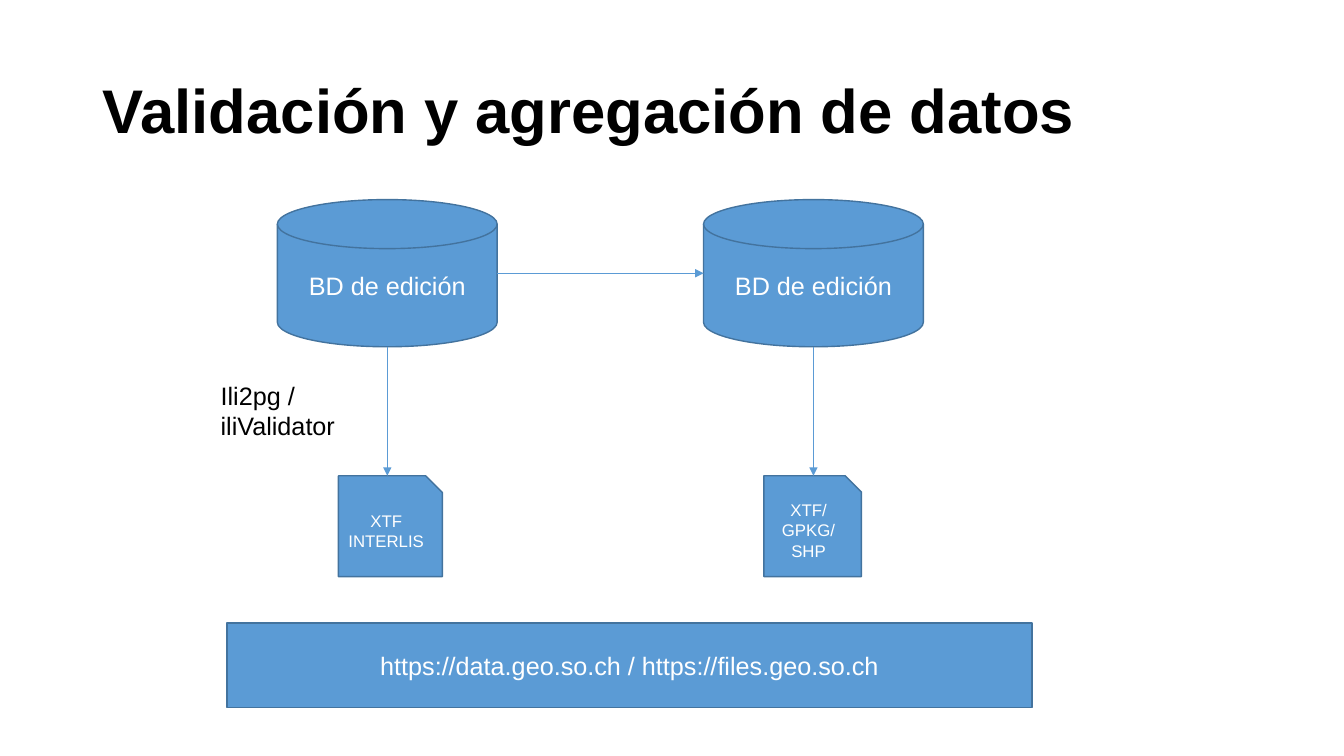
"""Build the slide on data validation and aggregation."""
from lxml import etree
from pptx import Presentation
from pptx.dml.color import RGBColor
from pptx.enum.shapes import MSO_CONNECTOR, MSO_SHAPE
from pptx.enum.text import MSO_ANCHOR, MSO_AUTO_SIZE, PP_ALIGN
from pptx.oxml.ns import qn
from pptx.util import Cm, Pt

TITLE = "Validación y agregación de datos"
TOOLS = "Ili2pg / iliValidator"
ADDRESSES = "https://data.geo.so.ch / https://files.geo.so.ch"
COLUMNS = [
    {"database": "BD de edición", "left": 6.99,
     "file": "XTF INTERLIS", "file_left": 8.53, "file_width": 2.62},
    {"database": "BD de edición", "left": 17.73,
     "file": "XTF/GPKG/SHP", "file_left": 19.25, "file_width": 2.46},
]

DATABASE_TOP, DATABASE_WIDTH, DATABASE_HEIGHT = 5.03, 5.54, 3.71
FILE_TOP, FILE_HEIGHT = 11.99, 2.54

FONT = "Arial"
BLACK = RGBColor(0x00, 0x00, 0x00)
WHITE = RGBColor(0xFF, 0xFF, 0xFF)
BLUE = RGBColor(0x5B, 0x9B, 0xD5)
DARK_BLUE = RGBColor(0x43, 0x73, 0x9E)

CYLINDER = MSO_SHAPE.FLOWCHART_MAGNETIC_DISK
FILE = MSO_SHAPE.SNIP_1_RECTANGLE
RECTANGLE = MSO_SHAPE.RECTANGLE
STRAIGHT = MSO_CONNECTOR.STRAIGHT
MIDDLE = MSO_ANCHOR.MIDDLE
LEFT, CENTER = PP_ALIGN.LEFT, PP_ALIGN.CENTER
NO_FIT, GROW = MSO_AUTO_SIZE.NONE, MSO_AUTO_SIZE.SHAPE_TO_FIT_TEXT


def write(box, text, size, color, align, bold=False):
    """Put one formatted paragraph in a box."""
    frame = box.text_frame
    frame.text = text
    frame.word_wrap = True
    para = frame.paragraphs[0]
    para.alignment = align
    font = para.runs[0].font
    font.name, font.size, font.bold = FONT, Pt(size), bold
    font.color.rgb = color


def add_block(page, kind, place, text, size):
    """Add a blue shape with centred white text."""
    block = page.shapes.add_shape(kind, *map(Cm, place))
    block.shadow.inherit = False
    block.fill.solid()
    block.fill.fore_color.rgb = BLUE
    block.line.color.rgb = DARK_BLUE
    block.line.width = Pt(1)
    write(block, text, size, WHITE, CENTER)
    block.text_frame.vertical_anchor = MIDDLE


def add_arrow(page, *ends):
    """Add a thin arrow from one point to another."""
    arrow = page.shapes.add_connector(STRAIGHT, *map(Cm, ends))
    arrow.line.color.rgb = BLUE
    arrow.line.width = Pt(0.5)
    etree.SubElement(arrow.line._get_or_add_ln(), qn("a:tailEnd"), type="triangle")
    etree.SubElement(arrow._element.spPr, qn("a:effectLst"))


def add_title(page):
    """Place and format the title placeholder."""
    title = page.shapes.title
    title.left, title.top, title.width, title.height = map(Cm, (2.34, 1.02, 29.21, 3.68))
    write(title, TITLE, 44, BLACK, LEFT, bold=True)
    title.text_frame.vertical_anchor = MIDDLE
    title.text_frame.auto_size = NO_FIT
    title.text_frame.paragraphs[0].line_spacing = 0.9


def main():
    """Draw the flow from databases to published files."""
    deck = Presentation()
    deck.slide_width, deck.slide_height = Cm(33.87), Cm(19.05)
    page = deck.slides.add_slide(deck.slide_layouts[5])
    add_title(page)

    for column in COLUMNS:
        left = column["left"]
        add_block(page, CYLINDER, (left, DATABASE_TOP, DATABASE_WIDTH, DATABASE_HEIGHT),
                  column["database"], 18)
        add_block(page, FILE, (column["file_left"], FILE_TOP, column["file_width"], FILE_HEIGHT),
                  column["file"], 12)
        center = left + DATABASE_WIDTH / 2
        add_arrow(page, center, DATABASE_TOP + DATABASE_HEIGHT, center, FILE_TOP)

    source, target = COLUMNS
    middle = DATABASE_TOP + DATABASE_HEIGHT / 2
    add_arrow(page, source["left"] + DATABASE_WIDTH, middle, target["left"], middle)

    label = page.shapes.add_textbox(*map(Cm, (5.31, 9.45, 3.89, 1.8)))
    write(label, TOOLS, 18, BLACK, LEFT)
    label.text_frame.auto_size = GROW

    add_block(page, RECTANGLE, (5.72, 15.7, 20.29, 2.13), ADDRESSES, 18)
    deck.save("out.pptx")


if __name__ == "__main__":
    main()
